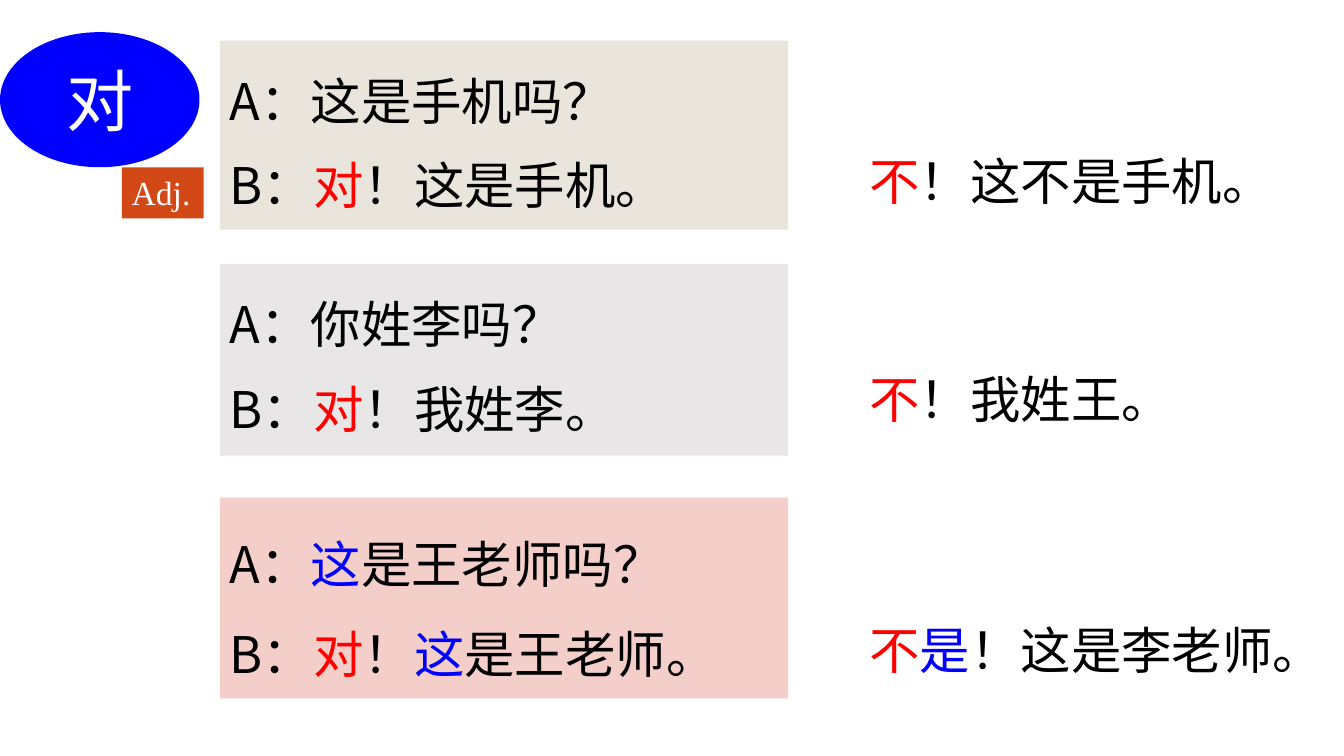
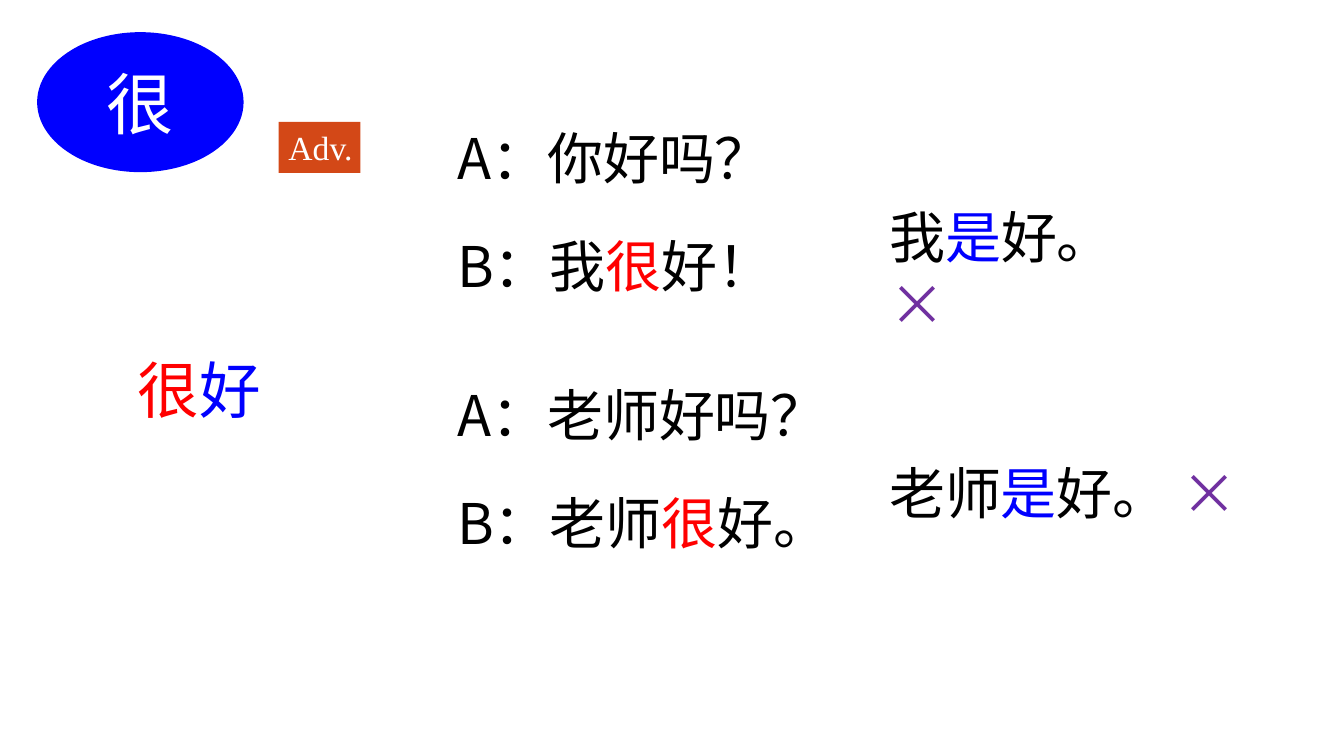
from lxml.etree import SubElement
from pptx import Presentation
from pptx.dml.color import RGBColor
from pptx.enum.shapes import MSO_SHAPE
from pptx.enum.text import MSO_ANCHOR, PP_ALIGN
from pptx.oxml.ns import qn
from pptx.util import Pt

COLORS = {
    "black": "000000",
    "white": "FFFFFF",
    "red": "FF0000",
    "blue": "0000FF",
    "purple": "7030A0",
    "orange": "D34817",
    "sand": "E9E5DC",
    "gray": "E9E6E7",
    "rose": "F4CEC9",
}
CHINESE = "Noto Sans CJK SC"
LATIN = "Times New Roman"


class WordDeck:
    def __init__(self):
        self.deck = Presentation()
        self.deck.slide_width = Pt(960)
        self.deck.slide_height = Pt(540)
        self.page = None

    def add_page(self):
        self.page = self.deck.slides.add_slide(self.deck.slide_layouts[6])

    def fill_text(self, box, lines, size, font=CHINESE, frame_format=None, **para_format):
        frame = box.text_frame
        frame_values = {"word_wrap": True, "vertical_anchor": MSO_ANCHOR.TOP}
        for name, value in (frame_values | (frame_format or {})).items():
            setattr(frame, name, value)
        for index, line in enumerate(lines):
            para = frame.add_paragraph() if index else frame.paragraphs[0]
            for name, value in ({"alignment": PP_ALIGN.LEFT} | para_format).items():
                setattr(para, name, value)
            for text, color in line:
                span = para.add_run()
                span.text = text
                for name, value in {"size": Pt(size), "name": font}.items():
                    setattr(span.font, name, value)
                span.font.color.rgb = RGBColor.from_string(COLORS[color])
                east_asian = SubElement(span.font._element, qn("a:ea"))
                east_asian.set("typeface", font)
        return frame

    def shape(self, kind, area, fill):
        box = self.page.shapes.add_shape(kind, *map(Pt, area))
        box.shadow.inherit = False
        box.fill.solid()
        box.fill.fore_color.rgb = RGBColor.from_string(COLORS[fill])
        box.line.fill.background()
        return box

    def headword(self, word, area):
        oval = self.shape(MSO_SHAPE.OVAL, area, "blue")
        self.fill_text(oval, [[(word, "white")]], 48, alignment=PP_ALIGN.CENTER,
                       frame_format={"vertical_anchor": MSO_ANCHOR.MIDDLE})

    def word_class(self, label, left, top):
        tag = self.shape(MSO_SHAPE.RECTANGLE, (left, top, 58.5, 36.5), "orange")
        self.fill_text(tag, [[(label, "white")]], 24, LATIN, {"margin_right": 0})

    def dialogue(self, lines, top, height, fill, line_spacing):
        panel = self.shape(MSO_SHAPE.RECTANGLE, (157, top, 406, height), fill)
        self.fill_text(panel, lines, 36, line_spacing=line_spacing)

    def text(self, lines, area, size, line_spacing=1.0):
        box = self.page.shapes.add_textbox(*map(Pt, area))
        return self.fill_text(box, lines, size, line_spacing=line_spacing)


def build_correct(words):
    words.add_page()
    words.headword("对", (0, 23, 142.5, 96.5))
    exchanges = [
        ([[("A：这是手机吗？", "black")],
          [("B：", "black"), ("对", "red"), ("！这是手机。", "black")]],
         29, 135, "sand", 1.4,
         [("不", "red"), ("！这不是手机。", "black")], 78),
        ([[("A：你姓李吗？", "black")],
          [("B：", "black"), ("对", "red"), ("！我姓李。", "black")]],
         188.5, 137, "gray", 1.4,
         [("不", "red"), ("！我姓王。", "black")], 233.5),
        ([[("A：", "black"), ("这", "blue"), ("是王老师吗？", "black")],
          [("B：", "black"), ("对", "red"), ("！", "black"),
           ("这", "blue"), ("是王老师。", "black")]],
         355.5, 143.5, "rose", 1.5,
         [("不", "red"), ("是", "blue"), ("！这是李老师。", "black")], 412.5),
    ]
    for lines, top, height, fill, spacing, reply, reply_top in exchanges:
        words.dialogue(lines, top, height, fill, spacing)
        words.text([reply], (614, reply_top, 345, 65.5), 36, 1.6)
    words.word_class("Adj.", 87, 119.5)


def build_very(words):
    words.add_page()
    words.headword("很", (26.5, 23, 147.5, 100))
    words.word_class("Adv.", 199, 87)
    words.text([[("很", "red"), ("好", "blue")]], (91.5, 216, 197, 108), 44, 1.6)
    lines = []
    for asked, answered, mark in (("你", "我", "！"), ("老师", "老师", "。")):
        lines.append([(f"A：{asked}好吗？", "black")])
        lines.append([(f"B：{answered}", "black"), ("很", "red"), (f"好{mark}", "black")])
    frame = words.text(lines, (319.5, 56, 362, 397.5), 40, 1.6)
    frame.paragraphs[2].space_before = Pt(30)
    for subject, top, width in (("我", 141, 218), ("老师", 324, 265)):
        wrong = [(subject, "black"), ("是", "blue"), ("好。 ", "black"), ("×", "purple")]
        words.text([wrong], (628, top, width, 55.5), 40)


def main():
    words = WordDeck()
    build_correct(words)
    build_very(words)
    words.deck.save("out.pptx")


if __name__ == "__main__":
    main()
